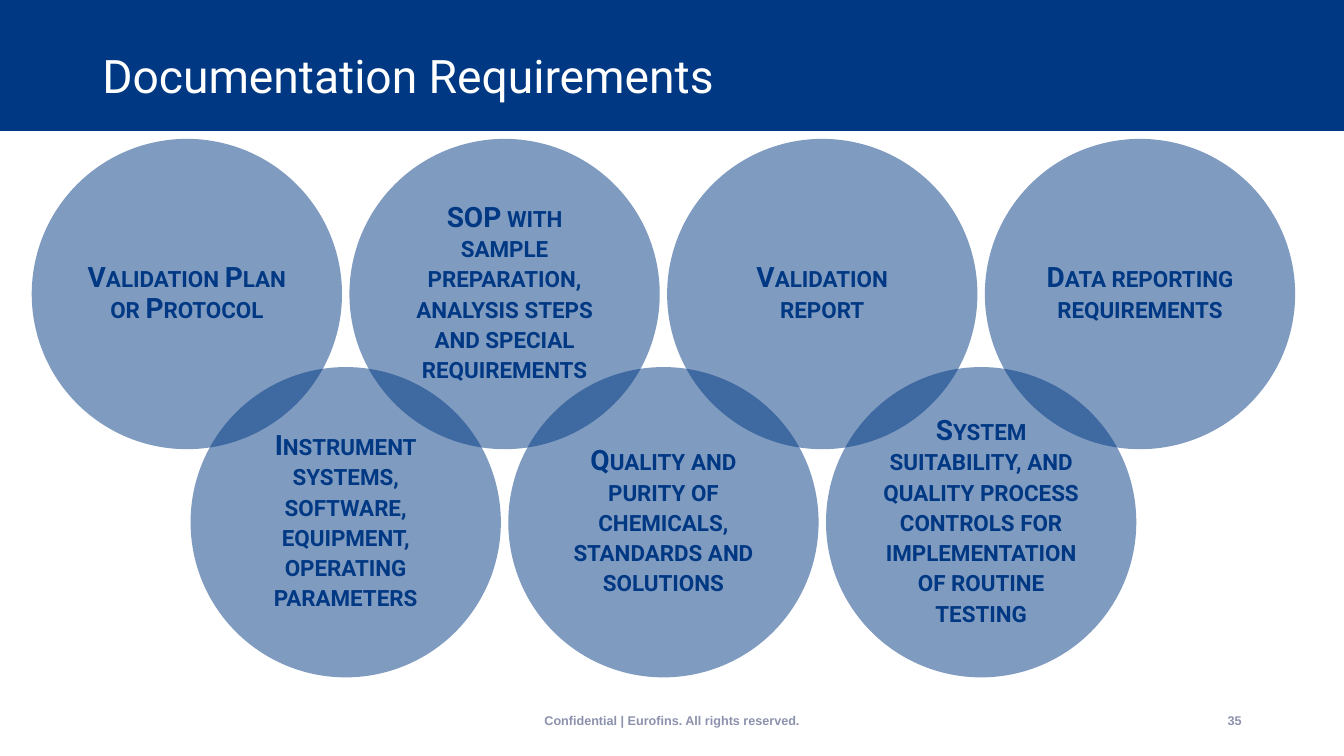
from lxml.etree import SubElement
from pptx import Presentation
from pptx.dml.color import RGBColor
from pptx.enum.shapes import MSO_SHAPE as Shape
from pptx.enum.text import MSO_ANCHOR as Anchor, PP_ALIGN as Align
from pptx.oxml.ns import qn
from pptx.util import Cm, Pt

NAVY, WHITE, GREY = "003883", "FFFFFF", "8C91AD"
SLIDE_W, SLIDE_H = 33.87, 19.05
# Topics from left to right, alternating between the upper and lower row
TOPICS = [
    "Validation Plan or Protocol",
    "Instrument systems, software, equipment, operating parameters",
    "SOP with sample preparation, analysis steps and special requirements",
    "Quality and purity of chemicals, standards and solutions",
    "Validation report",
    "System suitability, and quality process controls for implementation "
    "of routine testing",
    "Data reporting requirements",
]


def rgb(code):
    return RGBColor.from_string(code)


def add_filled(slide, kind, box, color, opacity=100):
    shape = slide.shapes.add_shape(kind, *map(Cm, box))
    shape.shadow.inherit = False
    shape.fill.solid()
    shape.fill.fore_color.rgb = rgb(color)
    shape.line.fill.background()
    if opacity < 100:
        srgb = shape.fill._xPr.find(".//" + qn("a:srgbClr"))
        SubElement(srgb, qn("a:alpha")).set("val", str(opacity * 1000))
    return shape


def write(shape, text, size, color, font, align, bold=False, spacing=1.0):
    """Fill a shape with one vertically centred paragraph."""
    frame = shape.text_frame
    frame.word_wrap = True
    frame.vertical_anchor = Anchor.MIDDLE
    paragraph = frame.paragraphs[0]
    paragraph.alignment = align
    paragraph.line_spacing = spacing
    run = paragraph.add_run()
    run.text = text
    paragraph.font.name = font
    paragraph.font.size = Pt(size)
    paragraph.font.bold = bold
    paragraph.font.color.rgb = rgb(color)
    return run


def add_header(slide, left, top, width, height):
    add_filled(slide, Shape.RECTANGLE, (left, top, width, height), NAVY)
    title = slide.shapes.add_textbox(
        Cm(left + 2.33), Cm(top + 1.02), Cm(width - 4.66), Cm(1.9))
    write(title, "Documentation Requirements", 33, WHITE, "Roboto",
          Align.LEFT, spacing=0.9)


def add_topic_circles(slide, left, top, width, height):
    """Place overlapping circles in two staggered rows that fill the box."""
    diameter = 7.82
    step = (width - diameter) / (len(TOPICS) - 1)
    drop = height - diameter
    for i, topic in enumerate(TOPICS):
        box = (left + i * step, top + i % 2 * drop, diameter, diameter)
        circle = add_filled(slide, Shape.OVAL, box, NAVY, opacity=50)
        frame = circle.text_frame
        frame.margin_left = frame.margin_right = Cm(0.2)
        frame.margin_top = frame.margin_bottom = Cm(0.2)
        run = write(circle, topic, 20, NAVY, "Roboto", Align.CENTER,
                    bold=True, spacing=0.9)
        run._r.get_or_add_rPr().set("cap", "small")


def add_footer(slide, left, top, width, height):
    notice_width, number_width = 11.43, 7.62
    parts = [
        ("Confidential | Eurofins. All rights reserved.",
         left + (width - notice_width) / 2, notice_width, Align.CENTER),
        ("35", left + width - number_width, number_width, Align.RIGHT),
    ]
    for text, x, part_width, align in parts:
        part = slide.shapes.add_textbox(
            Cm(x), Cm(top), Cm(part_width), Cm(height))
        write(part, text, 9, GREY, "Arial", align, bold=True)


def main():
    deck = Presentation()
    deck.slide_width, deck.slide_height = Cm(SLIDE_W), Cm(SLIDE_H)
    slide = deck.slides.add_slide(deck.slide_layouts[6])
    add_header(slide, 0, 0, SLIDE_W, 3.3)
    add_topic_circles(slide, 0.8, 3.5, 31.84, 13.57)
    add_footer(slide, 2.33, 17.65, SLIDE_W - 4.66, 1.02)
    deck.save("out.pptx")


if __name__ == "__main__":
    main()
